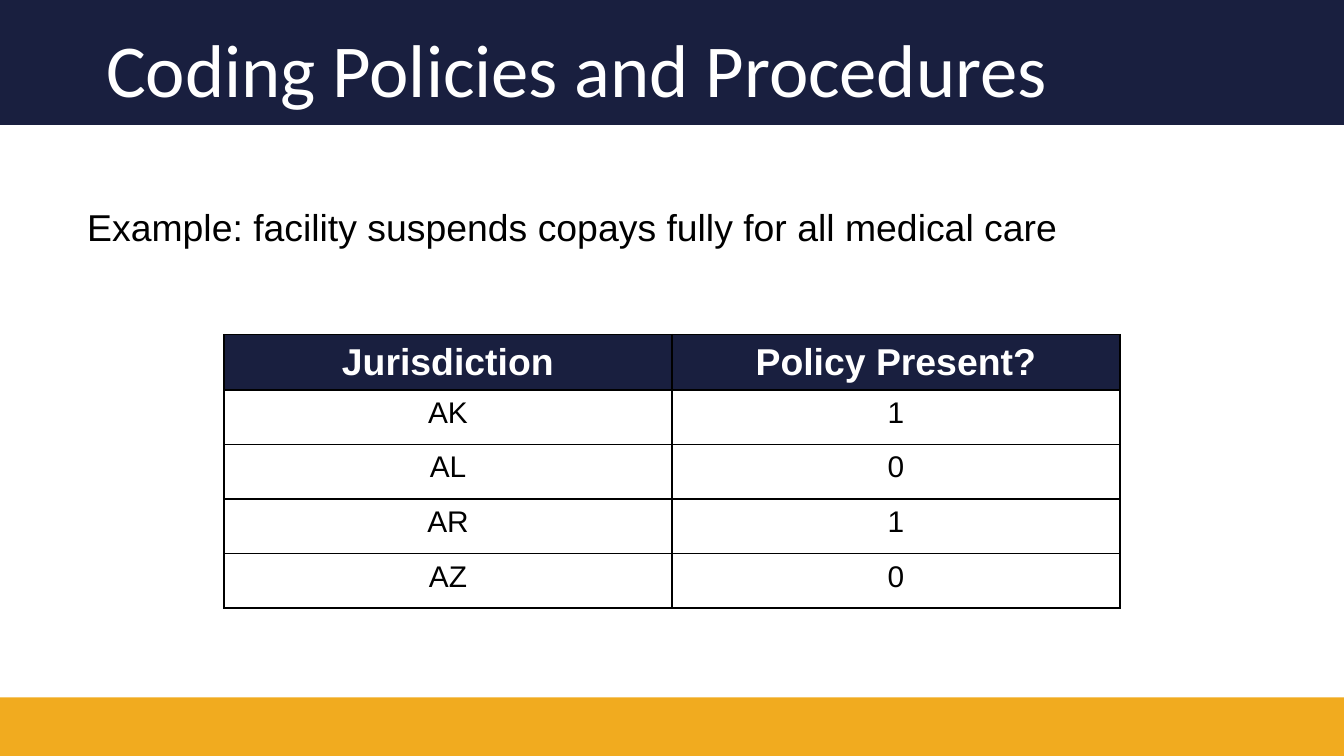
from lxml.etree import SubElement
from pptx import Presentation
from pptx.dml.color import RGBColor
from pptx.enum.shapes import MSO_SHAPE
from pptx.enum.text import MSO_ANCHOR, MSO_AUTO_SIZE, PP_ALIGN
from pptx.oxml.ns import qn
from pptx.util import Inches, Pt

COLORS = {"navy": "191F3F", "gold": "F1AB1F", "white": "FFFFFF", "black": "000000"}


def format_paragraph(paragraph, color, alignment=PP_ALIGN.LEFT, **font_values):
    paragraph.alignment = alignment
    for name, value in font_values.items():
        setattr(paragraph.runs[0].font, name, value)
    paragraph.runs[0].font.color.rgb = RGBColor.from_string(COLORS[color])


def add_borders(cell):
    """Draw a thin black line on all four sides of a table cell."""
    properties = cell._tc.get_or_add_tcPr()
    for index, side in enumerate(("lnL", "lnR", "lnT", "lnB")):
        line = properties.makeelement(qn(f"a:{side}"), {"w": str(Pt(1))})
        fill = SubElement(line, qn("a:solidFill"))
        SubElement(fill, qn("a:srgbClr"), val=COLORS["black"])
        properties.insert(index, line)


presentation = Presentation()
presentation.slide_width = Inches(10)
presentation.slide_height = presentation.slide_width * 9 // 16
slide = presentation.slides.add_slide(presentation.slide_layouts[5])

# Colour bars, kept behind the title
bars = [("navy", 0, 0.93), ("gold", 5.19, 0.44)]
for index, (color, top, height) in enumerate(bars):
    bar = slide.shapes.add_shape(
        MSO_SHAPE.RECTANGLE, 0, Inches(top), presentation.slide_width, Inches(height)
    )
    bar.shadow.inherit = False
    bar.fill.solid()
    bar.fill.fore_color.rgb = RGBColor.from_string(COLORS[color])
    bar.line.fill.background()
    slide.shapes._spTree.insert(2 + index, bar._element)

# Title
title = slide.shapes.title
title.left, title.top, title.width, title.height = map(Inches, (0.69, 0, 8.62, 1.09))
title.text_frame.text = "Coding Policies and Procedures"
title.text_frame.vertical_anchor = MSO_ANCHOR.MIDDLE
title.text_frame.auto_size = MSO_AUTO_SIZE.NONE
title_paragraph = title.text_frame.paragraphs[0]
title_paragraph.line_spacing = 0.9
format_paragraph(title_paragraph, "white", name="Calibri", size=Pt(40))

# Table of coded policies, centred across the slide
rows = [
    ("Jurisdiction", "Policy Present?"),
    ("AK", "1"),
    ("AL", "0"),
    ("AR", "1"),
    ("AZ", "0"),
]
header_format = {"color": "white", "size": Pt(20), "bold": True}
body_format = {"color": "black", "size": Pt(16), "bold": False}
table_width = presentation.slide_width * 2 // 3
table_left = (presentation.slide_width - table_width) // 2
table = slide.shapes.add_table(
    len(rows), 2, table_left, Inches(2.49), table_width, Inches(2.03)
).table
for row_index, values in enumerate(rows):
    is_header = row_index == 0
    for column_index, value in enumerate(values):
        cell = table.cell(row_index, column_index)
        cell.text = value
        cell.fill.solid()
        cell.fill.fore_color.rgb = RGBColor.from_string(
            COLORS["navy" if is_header else "white"]
        )
        format_paragraph(
            cell.text_frame.paragraphs[0],
            alignment=PP_ALIGN.CENTER,
            name="Arial",
            **(header_format if is_header else body_format),
        )
        add_borders(cell)

# Example statement
example = slide.shapes.add_textbox(Inches(0.55), Inches(1.47), Inches(8.62), Inches(0.44))
example.text_frame.word_wrap = True
example.text_frame.auto_size = MSO_AUTO_SIZE.SHAPE_TO_FIT_TEXT
example.text_frame.text = "Example: facility suspends copays fully for all medical care"
format_paragraph(example.text_frame.paragraphs[0], "black", name="Arial", size=Pt(20))

presentation.save("out.pptx")
